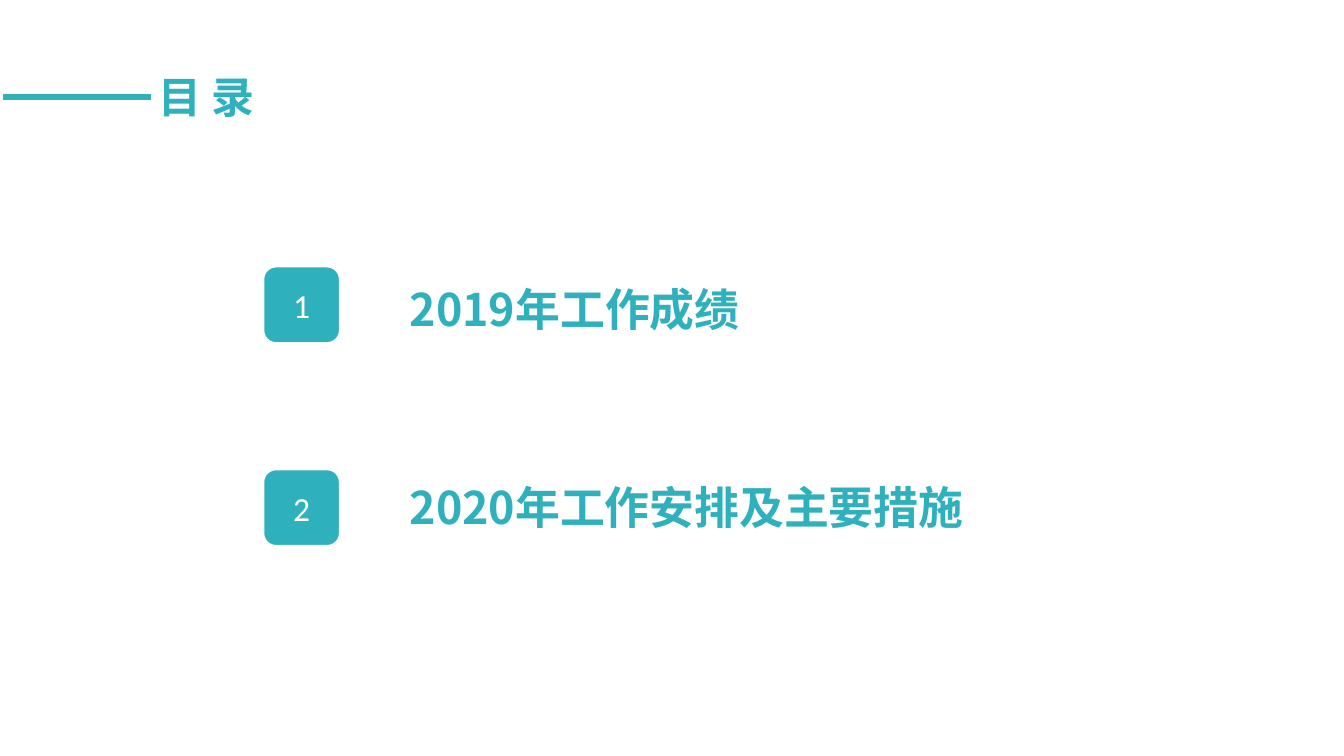
from lxml.etree import SubElement
from pptx import Presentation
from pptx.dml.color import RGBColor
from pptx.enum.shapes import MSO_CONNECTOR as Connector, MSO_SHAPE as Shape
from pptx.enum.text import MSO_ANCHOR as Anchor, PP_ALIGN as Align
from pptx.oxml.ns import qn
from pptx.util import Pt

TEAL = RGBColor(0x2E, 0xB0, 0xBD)
WHITE = RGBColor(0xFF, 0xFF, 0xFF)
LATIN = "Calibri"
CHINESE = "Noto Sans CJK SC"

TITLE = "目 录"
ITEMS = [
    {"number": "1", "spans": [("2019年工作成绩", CHINESE)],
     "badge_top": 142.8, "text_top": 147.6, "width": 193.7},
    {"number": "2", "spans": [("2020", CHINESE), ("年工作安排及主要措施", LATIN)],
     "badge_top": 251.5, "text_top": 253.4, "width": 313.9},
]
BADGE_LEFT, BADGE_SIZE = 141.1, 41
TEXT_LEFT, TEXT_HEIGHT = 212.4, 36
RULE_Y = 51.9


def add_span(para, text, font, size, color, bold=False):
    span = para.add_run()
    span.text = text
    for name, value in {"name": font, "size": Pt(size), "bold": bold}.items():
        setattr(span.font, name, value)
    span.font.color.rgb = color
    SubElement(span.font._element, qn("a:ea"), typeface=CHINESE)


def add_text(page, bounds, spans, size, margins):
    box = page.shapes.add_textbox(*map(Pt, bounds))
    frame = box.text_frame
    frame.word_wrap = True
    for name, value in margins.items():
        setattr(frame, name, Pt(value))
    for text, font in spans:
        add_span(frame.paragraphs[0], text, font, size, TEAL, True)


def add_badge(page, number, top):
    badge = page.shapes.add_shape(
        Shape.ROUNDED_RECTANGLE, *map(Pt, (BADGE_LEFT, top, BADGE_SIZE, BADGE_SIZE)))
    badge.shadow.inherit = False
    badge.fill.solid()
    badge.fill.fore_color.rgb = TEAL
    badge.line.color.rgb = WHITE
    badge.line.width = Pt(1)
    badge.text_frame.vertical_anchor = Anchor.MIDDLE
    para = badge.text_frame.paragraphs[0]
    para.alignment = Align.CENTER
    add_span(para, number, LATIN, 18, WHITE)


def add_rule(page):
    rule = page.shapes.add_connector(
        Connector.STRAIGHT, *map(Pt, (1.5, RULE_Y, 81, RULE_Y)))
    rule.line.color.rgb = TEAL
    rule.line.width = Pt(3)
    SubElement(rule._element.spPr, qn("a:effectLst"))


def main():
    deck = Presentation()
    deck.slide_width, deck.slide_height = Pt(720), Pt(405)
    page = deck.slides.add_slide(deck.slide_layouts[6])
    add_text(page, (80.5, 35.5, 66, 31.7), [(TITLE, LATIN)], 23,
             {"margin_left": 4.5, "margin_right": 4.5,
              "margin_top": 2.25, "margin_bottom": 2.25})
    add_rule(page)
    for item in ITEMS:
        add_badge(page, item["number"], item["badge_top"])
        bounds = (TEXT_LEFT, item["text_top"], item["width"], TEXT_HEIGHT)
        add_text(page, bounds, item["spans"], 24, {})
    deck.save("out.pptx")


if __name__ == "__main__":
    main()
